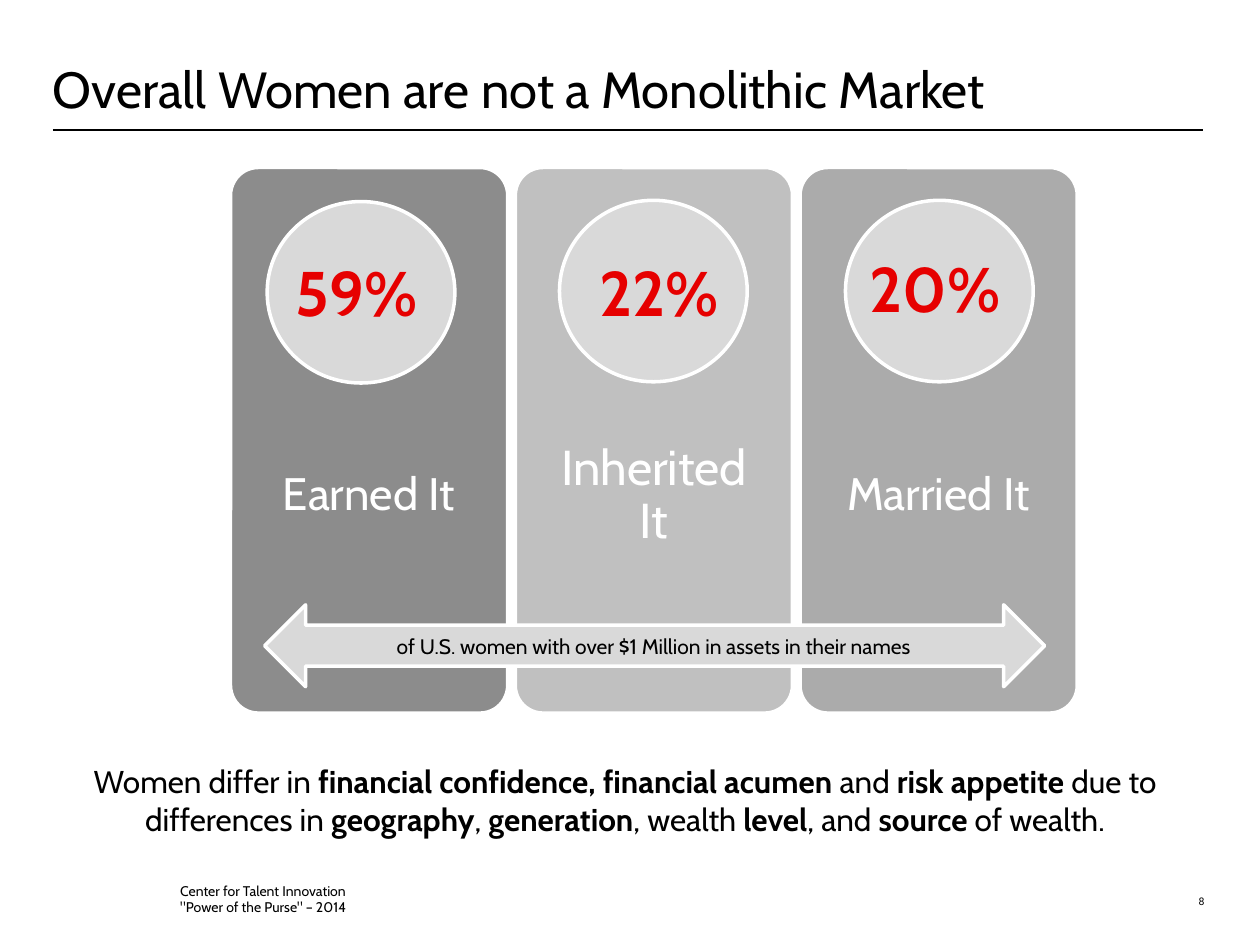
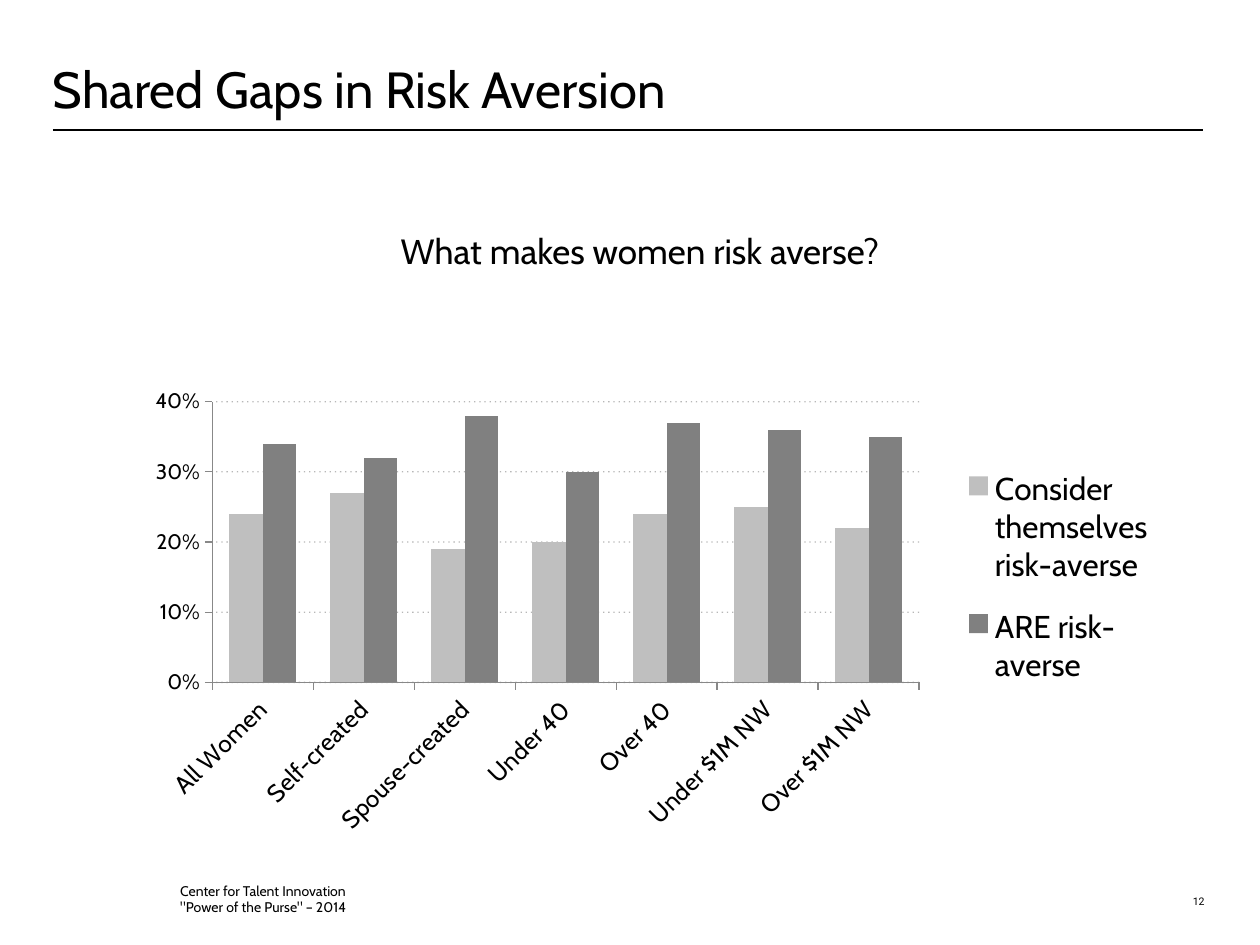
from lxml.etree import SubElement
from pptx import Presentation
from pptx.chart.data import CategoryChartData
from pptx.dml.color import RGBColor
from pptx.enum.chart import XL_CHART_TYPE as ChartType
from pptx.enum.chart import XL_LEGEND_POSITION as LegendPosition
from pptx.enum.chart import XL_TICK_MARK as TickMark
from pptx.enum.dml import MSO_LINE as Dash
from pptx.enum.shapes import MSO_CONNECTOR as Connector
from pptx.enum.shapes import MSO_SHAPE as Shape
from pptx.enum.text import MSO_ANCHOR as Anchor
from pptx.enum.text import PP_ALIGN as Align
from pptx.oxml import parse_xml
from pptx.oxml.ns import nsdecls, qn
from pptx.util import Pt

# Shared look: 100 px to the inch
EMU_PER_PX = 9144
FONT = "Cabin"
COLORS = {
    "ink": "000000",
    "paper": "FFFFFF",
    "accent": "E60000",
    "disc": "D9D9D9",
    "earned": "808080",
    "inherited": "A6A6A6",
    "married": "595959",
    "believed": "BFBFBF",
    "actual": "808080",
    "axis": "888888",
}
SOURCE = 'Center for Talent Innovation\n"Power of the Purse" – 2014'

# Wealth panels: label, size, inset, colour, opacity, disc place, share, share place
PANELS = [
    ("Earned It", 26, 20, "earned", 90, (212, 160), "59%", (220, 201)),
    ("Inherited It", 28, 22, "inherited", 70, (444, 159), "22%", (460, 201)),
    ("Married It", 26, 20, "married", 50, (671, 159), "20%", (679, 198)),
]
PANEL_LEFT, PANEL_PITCH, PANEL_WIDTH = 183, 226, 220

CAPTION = (
    "Women differ in *financial confidence, financial acumen *and* risk appetite "
    "*due to differences in *geography*, *generation*, wealth* level*, and "
    "*source* of wealth."
)

GROUPS = ["All Women", "Self-created", "Spouse-created", "Under 40", "Over 40",
          "Under $1M NW", "Over $1M NW"]
SERIES = [
    ("Consider themselves risk-averse", "believed",
     [0.24, 0.27, 0.19, 0.2, 0.24, 0.25, 0.22]),
    ("ARE risk-averse", "actual",
     [0.34, 0.32, 0.38, 0.3, 0.37, 0.36, 0.35]),
]


def px(*lengths):
    return [length * EMU_PER_PX for length in lengths]


def color(name):
    return RGBColor.from_string(COLORS[name])


def style_font(font, size, ink="ink", name=FONT):
    font.size = Pt(size)
    font.name = name
    font.color.rgb = color(ink)


def set_alpha(fill_parent, percent):
    """Make the solid fill below an XML element partly transparent."""
    tint = fill_parent.find(qn("a:solidFill")).find(qn("a:srgbClr"))
    SubElement(tint, qn("a:alpha")).set("val", str(percent * 1000))


def split_bold(para):
    """Turn text between asterisks into bold runs."""
    pieces = para.text.split("*")
    para.text = ""
    for index, piece in enumerate(pieces):
        if piece:
            span = para.add_run()
            span.text = piece
            span.font.bold = index % 2 == 1


def add_text(page, place, text, size, ink="ink", align=Align.LEFT,
             anchor=Anchor.TOP, inset=(0, 0), font=FONT, spacing=None):
    box = page.shapes.add_textbox(*px(*place))
    frame = box.text_frame
    frame.word_wrap = True
    frame.vertical_anchor = anchor
    frame.margin_left = frame.margin_right = px(inset[0])[0]
    frame.margin_top = frame.margin_bottom = px(inset[1])[0]
    frame.text = text
    for para in frame.paragraphs:
        para.alignment = align
        if spacing:
            para.line_spacing = spacing
        if "*" in para.text:
            split_bold(para)
        for span in para.runs:
            style_font(span.font, size, ink, font)


def add_block(page, kind, place, fill, opacity=100):
    block = page.shapes.add_shape(kind, *px(*place))
    block.shadow.inherit = False
    block.fill.solid()
    block.fill.fore_color.rgb = color(fill)
    if opacity < 100:
        set_alpha(block.element.spPr, opacity)
    block.line.color.rgb = color("paper")
    block.line.width = Pt(2)
    return block


def add_page(deck, title, number):
    """Blank page with the common title, rule, source and page number."""
    page = deck.slides.add_slide(deck.slide_layouts[6])
    rule = page.shapes.add_connector(Connector.STRAIGHT, *px(42, 103, 955, 103))
    rule.line.color.rgb = color("ink")
    rule.line.width = Pt(1.25)
    SubElement(rule.element.spPr, qn("a:effectLst"))
    add_text(page, (915, 682, 41, 38), str(number), 6, align=Align.RIGHT,
             anchor=Anchor.BOTTOM, font="Roboto")
    add_text(page, (42, 0, 914, 94), title, 29, anchor=Anchor.BOTTOM,
             spacing=Pt(29.1))
    add_text(page, (143, 700, 281, 27), SOURCE, 8, anchor=Anchor.MIDDLE)
    return page


def add_panel(page, left, label, size, inset, fill, opacity, disc, share, share_place):
    card = add_block(page, Shape.ROUNDED_RECTANGLE,
                     (left, 133, PANEL_WIDTH, 433), fill, opacity)
    card.adjustments[0] = 0.1
    add_text(page, (left, 307, PANEL_WIDTH, 173), label, size, "paper",
             Align.CENTER, Anchor.MIDDLE, (inset, inset), spacing=0.9)
    add_block(page, Shape.OVAL, (*disc, 149, 144), "disc")
    add_text(page, (*share_place, 126, 97), f"*{share}*", 36, "accent", Align.CENTER)


def place_part(part, index, target="", **fractions):
    """Fix a chart part at fractions of the chart; index is the layout's slot."""
    sizes = "".join(f'<c:{key} val="{value}"/>' for key, value in fractions.items())
    layout = parse_xml(
        f'<c:layout {nsdecls("c")}><c:manualLayout>{target}'
        f'<c:xMode val="edge"/><c:yMode val="edge"/>{sizes}'
        "</c:manualLayout></c:layout>")
    for old in part.findall(qn("c:layout")):
        part.remove(old)
    part.insert(index, layout)


def style_axis(axis, size):
    style_font(axis.tick_labels.font, size)
    axis.major_tick_mark = TickMark.OUTSIDE
    axis.minor_tick_mark = TickMark.NONE
    axis.format.line.color.rgb = color("axis")
    axis.format.line.width = Pt(0.75)


def add_risk_chart(page, place):
    data = CategoryChartData(number_format="0%")
    data.categories = GROUPS
    for name, _, values in SERIES:
        data.add_series(name, values)
    chart = page.shapes.add_chart(ChartType.COLUMN_CLUSTERED, *px(*place), data).chart
    style_font(chart.font, 18)
    chart.has_title = False
    place_part(chart.element.chart.plotArea, 0, '<c:layoutTarget val="inner"/>',
               x=0.11, y=0.09, w=0.66, h=0.56)

    # Columns
    plot = chart.plots[0]
    plot.gap_width = 100
    plot.overlap = 0
    plot.vary_by_categories = False
    for series, (_, fill, _) in zip(plot.series, SERIES):
        series.format.fill.solid()
        series.format.fill.fore_color.rgb = color(fill)

    # Axes
    style_axis(chart.category_axis, 14)
    label_body = chart.category_axis.tick_labels.font._element.getparent().getparent()
    label_body.getparent().find(qn("a:bodyPr")).set("rot", "-2700000")
    values = chart.value_axis
    style_axis(values, 12)
    values.minimum_scale, values.maximum_scale, values.major_unit = 0, 0.4, 0.1
    values.tick_labels.number_format = "0%"
    values.tick_labels.number_format_is_linked = False
    grid = values.major_gridlines.format.line
    grid.color.rgb = color("axis")
    grid.width = Pt(0.75)
    grid.dash_style = Dash.ROUND_DOT
    grid_line = (values.major_gridlines._xAx.find(qn("c:majorGridlines"))
                 .find(qn("c:spPr")).find(qn("a:ln")))
    grid_line.find(qn("a:prstDash")).set("val", "dot")
    set_alpha(grid_line, 60)

    # Legend, in the free strip right of the columns
    chart.has_legend = True
    chart.legend.position = LegendPosition.RIGHT
    chart.legend.include_in_layout = False
    style_font(chart.legend.font, 18)
    place_part(chart.legend._element, 1, x=0.8, y=0.18, w=0.2, h=0.52)


def main():
    deck = Presentation()
    deck.slide_width, deck.slide_height = px(1000, 750)

    # Sources of wealth
    page = add_page(deck, "Overall Women are not a Monolithic Market", 8)
    for index, panel in enumerate(PANELS):
        add_panel(page, PANEL_LEFT + index * PANEL_PITCH, *panel)
    add_block(page, Shape.LEFT_RIGHT_ARROW, (210, 480, 619, 65), "disc")
    add_text(page, (250, 503, 538, 24),
             "of U.S. women with over $1 Million in assets in their names", 12,
             align=Align.CENTER)
    add_text(page, (17, 600, 958, 71), CAPTION, 18, align=Align.CENTER, inset=(10, 5))

    # Risk aversion
    page = add_page(deck, "Shared Gaps in Risk Aversion", 12)
    add_risk_chart(page, (75, 283, 850, 398))
    add_text(page, (33, 177, 950, 44), "What makes women risk averse?", 20,
             align=Align.CENTER, inset=(10, 5))

    deck.save("out.pptx")


if __name__ == "__main__":
    main()
